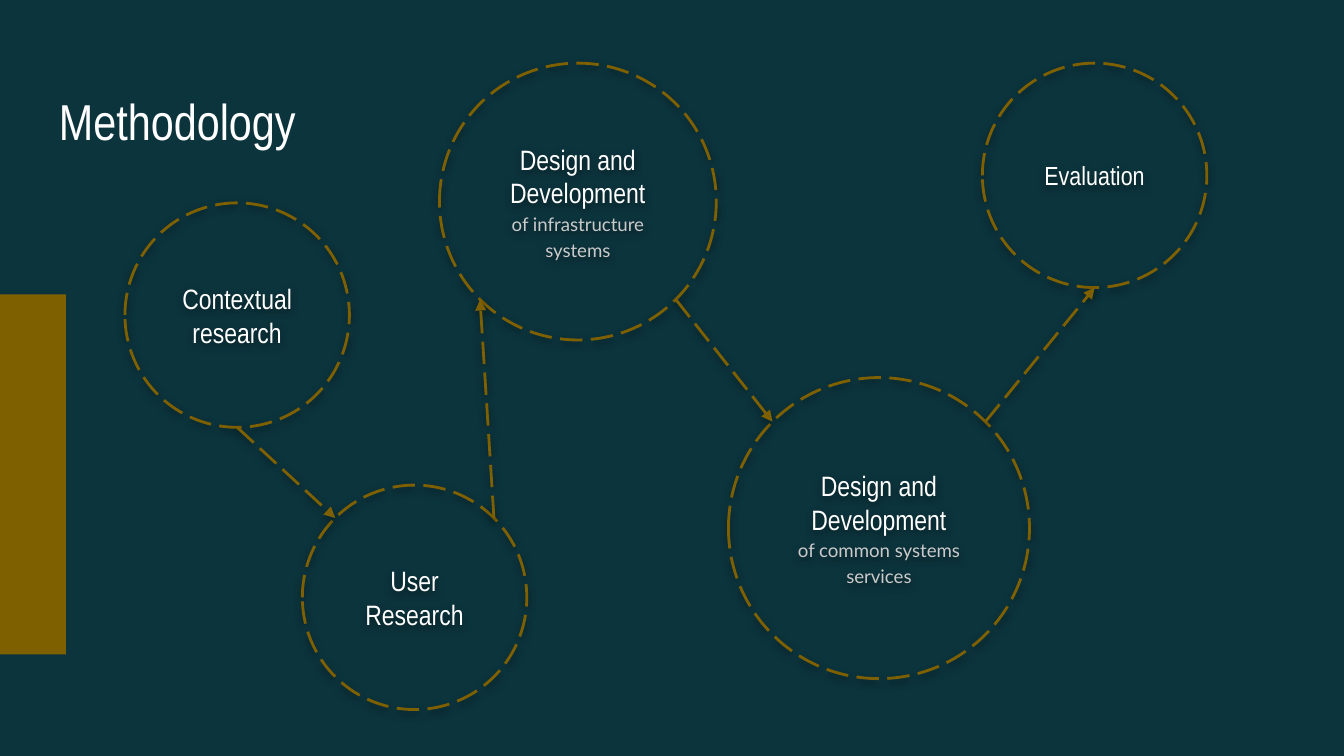
from math import cos, radians, sin

from lxml import etree
from pptx import Presentation
from pptx.dml.color import RGBColor
from pptx.enum.dml import MSO_LINE
from pptx.enum.shapes import MSO_CONNECTOR, MSO_SHAPE
from pptx.enum.text import MSO_ANCHOR, PP_ALIGN
from pptx.oxml.ns import qn
from pptx.util import Inches, Pt

RECTANGLE, OVAL = MSO_SHAPE.RECTANGLE, MSO_SHAPE.OVAL
STRAIGHT, LONG_DASH = MSO_CONNECTOR.STRAIGHT, MSO_LINE.LONG_DASH
CENTER, MIDDLE = PP_ALIGN.CENTER, MSO_ANCHOR.MIDDLE

TEAL = RGBColor(0x0C, 0x34, 0x3D)
OCHRE = RGBColor(0x7F, 0x60, 0x00)
WHITE = RGBColor(0xFF, 0xFF, 0xFF)
GREY = RGBColor(0xCA, 0xCA, 0xCA)
HEADING_FONT, DETAIL_FONT = "Arial Narrow", "Lato"

TITLE = "Methodology"

# name: (left, top, diameter, heading, heading size, detail)
STAGES = {
    "context": (0.93, 1.51, 1.67, "Contextual research", 15, None),
    "infrastructure": (3.27, 0.47, 2.06, "Design and Development", 15,
                       "of infrastructure systems"),
    "services": (5.42, 2.81, 2.24, "Design and Development", 15,
                 "of common systems services"),
    "evaluation": (7.31, 0.47, 1.67, "Evaluation", 14, None),
    "users": (2.25, 3.61, 1.67, "User Research", 15, None),
}

# Angles on the circles, clockwise from the right
BOTTOM_RIGHT, BOTTOM, BOTTOM_LEFT, TOP_LEFT, TOP_RIGHT = 45, 90, 135, 225, 315
ARROWS = [
    ("context", BOTTOM, "users", TOP_LEFT),
    ("users", TOP_RIGHT, "infrastructure", BOTTOM_LEFT),
    ("infrastructure", BOTTOM_RIGHT, "services", TOP_LEFT),
    ("services", TOP_RIGHT, "evaluation", BOTTOM),
]


def add_run(paragraph, text, size, font_name, color):
    run = paragraph.add_run()
    run.text = text
    run.font.size = Pt(size)
    run.font.name = font_name
    run.font.color.rgb = color


def set_insets(frame):
    frame.word_wrap = True
    frame.margin_left = frame.margin_right = Inches(0.1)
    frame.margin_top = frame.margin_bottom = Inches(0.1)


def style_outline(shape):
    """Dashed ochre line with a soft shadow straight below."""
    shape.line.color.rgb = OCHRE
    shape.line.width = Pt(1.5)
    shape.line.dash_style = LONG_DASH
    effects = etree.SubElement(shape._element.spPr, qn("a:effectLst"))
    shadow = etree.SubElement(effects, qn("a:outerShdw"), blurRad=str(Pt(4.5)),
                              dist=str(Pt(1.5)), dir="5400000",
                              algn="bl", rotWithShape="0")
    color = etree.SubElement(shadow, qn("a:srgbClr"), val="000000")
    etree.SubElement(color, qn("a:alpha"), val="50000")


def point_on_circle(name, angle):
    left, top, diameter = STAGES[name][:3]
    radius = diameter / 2
    return (Inches(left + radius + radius * cos(radians(angle))),
            Inches(top + radius + radius * sin(radians(angle))))


def add_stage(slide, left, top, diameter, heading, size, detail):
    circle = slide.shapes.add_shape(OVAL, Inches(left), Inches(top),
                                    Inches(diameter), Inches(diameter))
    circle.fill.background()
    style_outline(circle)
    frame = circle.text_frame
    set_insets(frame)
    frame.vertical_anchor = MIDDLE
    paragraph = frame.paragraphs[0]
    paragraph.alignment = CENTER
    add_run(paragraph, heading, size, HEADING_FONT, WHITE)
    if detail:
        paragraph = frame.add_paragraph()
        paragraph.alignment = CENTER
        paragraph.line_spacing = 1.15
        paragraph.space_after = Pt(12)
        add_run(paragraph, detail, 10, DETAIL_FONT, GREY)


def add_arrow(slide, start, start_angle, end, end_angle):
    arrow = slide.shapes.add_connector(STRAIGHT,
                                       *point_on_circle(start, start_angle),
                                       *point_on_circle(end, end_angle))
    style_outline(arrow)
    etree.SubElement(arrow.line._get_or_add_ln(), qn("a:tailEnd"), type="triangle")


def main():
    # Widescreen slide, 16 by 9
    presentation = Presentation()
    presentation.slide_width = Inches(10)
    presentation.slide_height = Inches(10 * 9 / 16)
    slide = presentation.slides.add_slide(presentation.slide_layouts[6])
    slide.background.fill.solid()
    slide.background.fill.fore_color.rgb = TEAL

    # Title
    title = slide.shapes.add_textbox(Inches(0.34), Inches(0.57),
                                     Inches(6.24), Inches(0.63))
    set_insets(title.text_frame)
    add_run(title.text_frame.paragraphs[0], TITLE, 27, HEADING_FONT, WHITE)

    # Side bar
    bar = slide.shapes.add_shape(RECTANGLE, 0, Inches(2.19),
                                 Inches(0.49), Inches(2.68))
    bar.shadow.inherit = False
    bar.fill.solid()
    bar.fill.fore_color.rgb = OCHRE
    bar.line.fill.background()

    # Stages and the arrows between them
    for stage in STAGES.values():
        add_stage(slide, *stage)
    for arrow in ARROWS:
        add_arrow(slide, *arrow)

    presentation.save("out.pptx")


if __name__ == "__main__":
    main()
